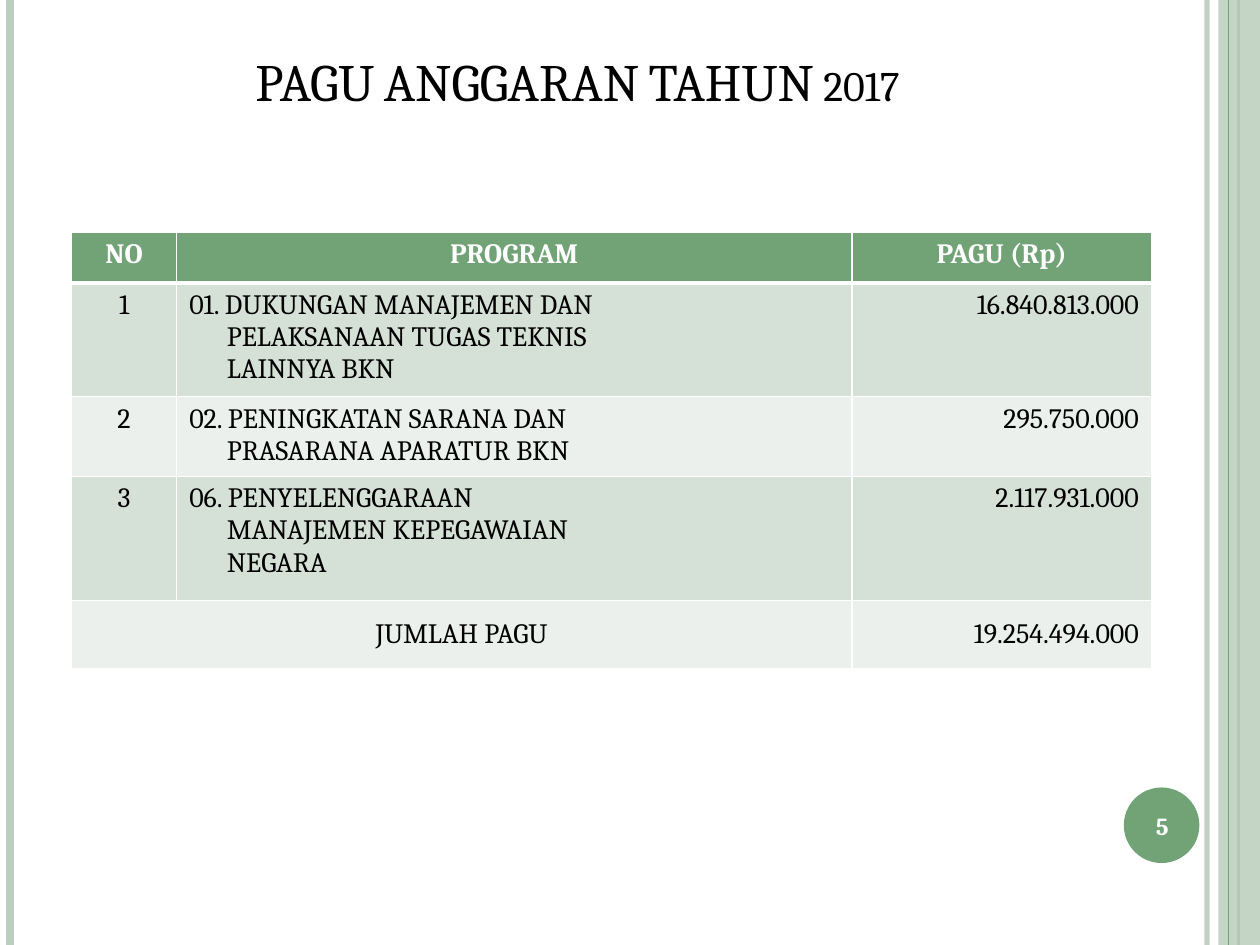
from dataclasses import dataclass
from lxml.etree import SubElement
from pptx import Presentation
from pptx.dml.color import RGBColor
from pptx.enum.shapes import MSO_CONNECTOR, MSO_SHAPE
from pptx.enum.text import MSO_ANCHOR, PP_ALIGN
from pptx.oxml import parse_xml
from pptx.oxml.ns import nsdecls, qn
from pptx.util import Pt


@dataclass(frozen=True)
class Theme:
    font: str = "Cambria"
    green: str = "72A376"
    pale: str = "BCCEBD"
    band: str = "D5E0D6"
    light: str = "EBF0EC"
    white: str = "FFFFFF"
    black: str = "000000"
    title_size: int = 30
    table_size: int = 16
    number_size: int = 14


THEME = Theme()
WIDTH, HEIGHT = 720, 540
TITLE = "PAGU ANGGARAN TAHUN 2017"
PAGE_NUMBER = "5"
HEADER = ("NO", "PROGRAM", "PAGU (Rp)")
PROGRAMS = [
    ("1", ("01. DUKUNGAN MANAJEMEN DAN", "PELAKSANAAN TUGAS TEKNIS", "LAINNYA BKN"), "16.840.813.000"),
    ("2", ("02. PENINGKATAN SARANA DAN", "PRASARANA APARATUR BKN"), "295.750.000"),
    ("3", ("06. PENYELENGGARAAN", "MANAJEMEN KEPEGAWAIAN", "NEGARA"), "2.117.931.000"),
]
TOTAL = ("JUMLAH PAGU", "", "19.254.494.000")
COLUMN_WIDTHS = (60.2, 385.8, 171.2)
ROW_HEIGHTS = (29.3, 62, 44, 71, 39)
COLUMN_ALIGNS = (PP_ALIGN.CENTER, PP_ALIGN.LEFT, PP_ALIGN.RIGHT)
HANGING = 21.5

OUTER_LINES = [(689.8, THEME.pale, 3, 93), (5.8, THEME.pale, 4.5, 100), (707.8, THEME.green, 1.5, 100)]
INNER_LINE = (702, THEME.green, 0.75, 100)
SIDE_BAND = (696.2, 0, 23.8, HEIGHT)
BADGE = (642.2, 450, 43.2, 43.2)
NUMBER_BOX = (640.1, 451.4, 48.2, 41)
TITLE_BOX = (36, 21.6, 588.2, 46.1)
TABLE_ORIGIN = (40.8, 132.5)


def points(values):
    return [Pt(value) for value in values]


def set_alpha(element, percent):
    color = next(element.iter(qn("a:srgbClr")))
    SubElement(color, qn("a:alpha")).set("val", str(percent * 1000))


def add_rule(page, x, color, weight, opacity):
    rule = page.shapes.add_connector(MSO_CONNECTOR.STRAIGHT, *points((x, 0, x, HEIGHT)))
    rule.line.color.rgb = RGBColor.from_string(color)
    rule.line.width = Pt(weight)
    if opacity < 100:
        set_alpha(rule.line._get_or_add_ln(), opacity)
    SubElement(rule._element.spPr, qn("a:effectLst"))


def add_solid(page, kind, bounds, color, opacity=100):
    shape = page.shapes.add_shape(kind, *points(bounds))
    shape.shadow.inherit = False
    shape.fill.solid()
    shape.fill.fore_color.rgb = RGBColor.from_string(color)
    shape.line.fill.background()
    if opacity < 100:
        set_alpha(shape._element.spPr, opacity)


def add_span(para, text, size, color, bold=False):
    span = para.add_run()
    span.text = text
    span.font.name = THEME.font
    span.font.size = Pt(size)
    span.font.bold = bold
    span.font.color.rgb = RGBColor.from_string(color)
    return span


def add_text(page, bounds, text, size, color, anchor, bold=False):
    box = page.shapes.add_textbox(*points(bounds))
    frame = box.text_frame
    frame.word_wrap = True
    frame.vertical_anchor = anchor
    para = frame.paragraphs[0]
    para.alignment = PP_ALIGN.CENTER
    return add_span(para, text, size, color, bold)


def set_borders(cell, weights):
    properties = cell._tc.get_or_add_tcPr()
    for index, (side, weight) in enumerate(weights.items()):
        properties.insert(index, parse_xml(
            f'<a:ln{side} {nsdecls("a")} w="{Pt(weight)}"><a:solidFill>'
            f'<a:srgbClr val="{THEME.white}"/></a:solidFill></a:ln{side}>'))


def fill_cell(cell, content, align, fill, color, bold):
    cell.fill.solid()
    cell.fill.fore_color.rgb = RGBColor.from_string(fill)
    lines = (content,) if isinstance(content, str) else content
    for index, line in enumerate(lines):
        para = cell.text_frame.paragraphs[0] if index == 0 else cell.text_frame.add_paragraph()
        para.alignment = align
        if len(lines) > 1:
            properties = para._p.get_or_add_pPr()
            properties.set("marL", str(Pt(HANGING)))
            properties.set("indent", str(Pt(-HANGING if index == 0 else 0)))
        if line:
            add_span(para, line, THEME.table_size, color, bold)


def add_budget_table(page):
    rows = [HEADER, *PROGRAMS, TOTAL]
    last = len(rows) - 1
    size = (sum(COLUMN_WIDTHS), sum(ROW_HEIGHTS))
    table = page.shapes.add_table(len(rows), len(HEADER), *points(TABLE_ORIGIN + size)).table
    for column, width in zip(table.columns, COLUMN_WIDTHS):
        column.width = Pt(width)
    for row, height in zip(table.rows, ROW_HEIGHTS):
        row.height = Pt(height)
    table.cell(last, 0).merge(table.cell(last, 1))
    for r, row in enumerate(rows):
        header = r == 0
        fill = THEME.green if header else (THEME.band if r % 2 else THEME.light)
        color = THEME.white if header else THEME.black
        for c, content in enumerate(row):
            cell = table.cell(r, c)
            align = PP_ALIGN.CENTER if header else COLUMN_ALIGNS[c]
            fill_cell(cell, content, align, fill, color, header)
            set_borders(cell, {"L": 1, "R": 1, "T": 3 if r == 1 else 1, "B": 3 if header else 1})
            if r == last:
                cell.vertical_anchor = MSO_ANCHOR.MIDDLE


def main():
    deck = Presentation()
    deck.slide_width, deck.slide_height = Pt(WIDTH), Pt(HEIGHT)
    page = deck.slides.add_slide(deck.slide_layouts[6])
    for rule in OUTER_LINES:
        add_rule(page, *rule)
    add_solid(page, MSO_SHAPE.RECTANGLE, SIDE_BAND, THEME.pale, 87)
    add_rule(page, *INNER_LINE)
    add_solid(page, MSO_SHAPE.OVAL, BADGE, THEME.green)
    title = add_text(page, TITLE_BOX, TITLE, THEME.title_size, THEME.black, MSO_ANCHOR.BOTTOM)
    title.font._element.set("cap", "small")
    add_budget_table(page)
    add_text(page, NUMBER_BOX, PAGE_NUMBER, THEME.number_size, THEME.white, MSO_ANCHOR.MIDDLE, True)
    deck.save("out.pptx")


if __name__ == "__main__":
    main()
